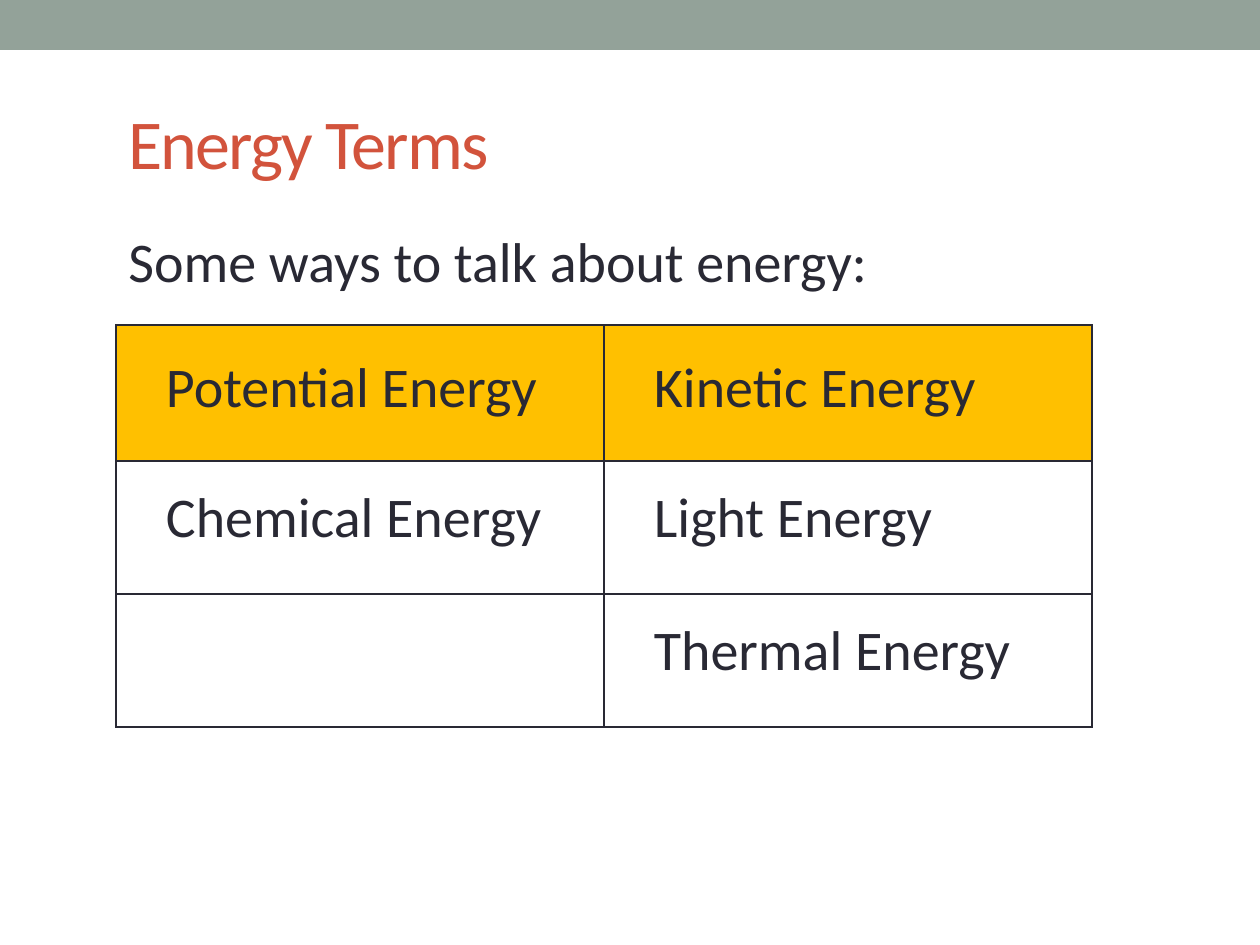
from lxml import etree
from pptx import Presentation
from pptx import util as u
from pptx.dml.color import RGBColor
from pptx.enum import shapes, text
from pptx.oxml.ns import qn

INK, RED, GOLD, SAGE = "292934", "D2533C", "FFC000", "93A299"
TEXTS = [
    ("Energy Terms", (116, 73, 1081, 136), 40, RED, text.MSO_ANCHOR.MIDDLE, -100),
    ("Some ways to talk about energy:", (116, 220, 987, 81), 32, INK, text.MSO_ANCHOR.TOP, 0),
]
ROWS = [
    ("Potential Energy", "Kinetic Energy"),
    ("Chemical Energy", "Light Energy"),
    ("", "Thermal Energy"),
]
TABLE_LEFT, TABLE_TOP, COL_WIDTH = 116, 325, 488
ROW_HEIGHTS = (136, 133, 133)
TOP_MARGINS = (29, 23, 23)


def px(n):
    return u.Emu(round(n * 914400 / 126))


def color(value):
    return RGBColor.from_string(value)


def write(tf, words, size, ink, spacing=0):
    r = tf.paragraphs[0].add_run()
    r.text = words
    for name, value in {"name": "Calibri", "size": u.Pt(size), "bold": False}.items():
        setattr(r.font, name, value)
    r.font.color.rgb = color(ink)
    if spacing:
        r.font._element.set("spc", str(spacing))


def add_borders(cell):
    tc_pr = cell._tc.get_or_add_tcPr()
    for i, side in enumerate(("lnL", "lnR", "lnT", "lnB")):
        ln = etree.Element(qn(f"a:{side}"), w=str(u.Pt(1)))
        fill = etree.SubElement(ln, qn("a:solidFill"))
        etree.SubElement(fill, qn("a:srgbClr"), val=INK)
        tc_pr.insert(i, ln)


def add_energy_table(s):
    frame = s.shapes.add_table(len(ROWS), len(ROWS[0]), px(TABLE_LEFT), px(TABLE_TOP),
                               px(COL_WIDTH * len(ROWS[0])), px(sum(ROW_HEIGHTS)))
    table = frame.table
    table.first_row = table.horz_banding = False
    for col in table.columns:
        col.width = px(COL_WIDTH)
    for i, words_in_row in enumerate(ROWS):
        table.rows[i].height = px(ROW_HEIGHTS[i])
        for j, words in enumerate(words_in_row):
            cell = table.cell(i, j)
            cell.margin_left, cell.margin_top = px(50), px(TOP_MARGINS[i])
            if i == 0:
                cell.fill.solid()
                cell.fill.fore_color.rgb = color(GOLD)
            else:
                cell.fill.background()
            add_borders(cell)
            if words:
                write(cell.text_frame, words, 32, INK)


def main():
    """Build the energy terms slide."""
    prs = Presentation()
    prs.slide_width, prs.slide_height = px(1260), px(945)
    s = prs.slides.add_slide(prs.slide_layouts[6])

    band = s.shapes.add_shape(shapes.MSO_SHAPE.RECTANGLE, 0, 0, px(1260), px(50))
    band.shadow.inherit = False
    band.fill.solid()
    band.fill.fore_color.rgb = color(SAGE)
    band.line.fill.background()

    for words, box, size, ink, anchor, spacing in TEXTS:
        tf = s.shapes.add_textbox(*map(px, box)).text_frame
        tf.word_wrap = True
        tf.vertical_anchor = anchor
        write(tf, words, size, ink, spacing)

    add_energy_table(s)
    prs.save("out.pptx")


if __name__ == "__main__":
    main()
